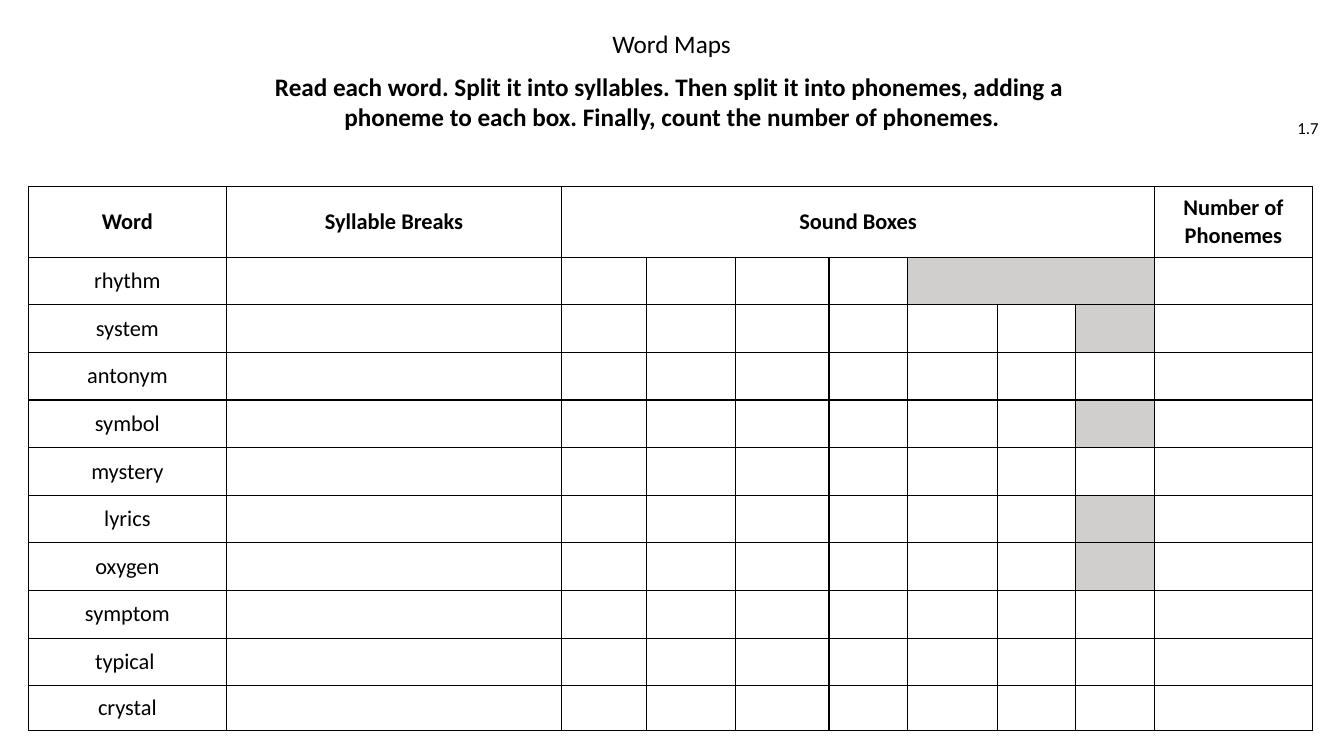
from pptx import Presentation
from pptx.dml.color import RGBColor
from pptx.enum import text as t
from pptx.oxml import parse_xml
from pptx.oxml.ns import nsdecls
from pptx.util import Cm, Pt

BLACK = RGBColor(0x00, 0x00, 0x00)
GREY = RGBColor(0xD1, 0xCE, 0xCE)
FONT = "Calibri"

TITLE = "Word Maps"
INSTRUCTIONS = (
    "Read each word. Split it into syllables. Then split it into phonemes, adding a \n"
    "phoneme to each box. Finally, count the number of phonemes."
)
LESSON = "1.7"

# Column number of each heading
HEADINGS = {0: "Word", 1: "Syllable Breaks", 2: "Sound Boxes", 9: "Number of Phonemes"}
# Each word with its number of open sound boxes
WORDS = [
    ("rhythm", 4), ("system", 6), ("antonym", 7), ("symbol", 6), ("mystery", 7),
    ("lyrics", 6), ("oxygen", 6), ("symptom", 7), ("typical ", 7), ("crystal", 7),
]
FIRST_BOX, LAST_BOX = 2, 8
COLUMN_WIDTHS = [4.98, 8.46, 2.13, 2.24, 2.36, 1.98, 2.26, 1.98, 1.98, 3.99]
ROW_HEIGHTS = [1.78] + [1.2] * 9 + [1.12]


def write(frame, content, size, align, bold=False):
    frame.text = content
    for paragraph in frame.paragraphs:
        paragraph.alignment = align
        for run in paragraph.runs:
            run.font.name, run.font.size, run.font.bold = FONT, Pt(size), bold
            run.font.color.rgb = BLACK


def add_label(slide, box, content, size, align, anchor, bold=False):
    frame = slide.shapes.add_textbox(*(Cm(length) for length in box)).text_frame
    frame.word_wrap = True
    frame.vertical_anchor = anchor
    write(frame, content, size, align, bold)


def outline(cell):
    """Draw a thin black line on all four sides of a cell."""
    properties = cell._tc.get_or_add_tcPr()
    for position, side in enumerate(("lnL", "lnR", "lnT", "lnB")):
        properties.insert(position, parse_xml(
            f'<a:{side} {nsdecls("a")} w="{Pt(1)}"><a:solidFill>'
            f'<a:srgbClr val="{BLACK}"/></a:solidFill></a:{side}>'))


def fill_cell(cell, content, bold=False):
    cell.vertical_anchor = t.MSO_ANCHOR.MIDDLE
    write(cell.text_frame, content, 16, t.PP_ALIGN.CENTER, bold)


def add_word_map(slide):
    table = slide.shapes.add_table(
        len(ROW_HEIGHTS), len(COLUMN_WIDTHS), Cm(0.72), Cm(4.7),
        Cm(sum(COLUMN_WIDTHS)), Cm(sum(ROW_HEIGHTS))).table
    table.first_row = table.horz_banding = False
    for column, width in zip(table.columns, COLUMN_WIDTHS):
        column.width = Cm(width)
    for row, height in zip(table.rows, ROW_HEIGHTS):
        row.height = Cm(height)
    for cell in table.iter_cells():
        cell.fill.background()
        outline(cell)

    table.cell(0, FIRST_BOX).merge(table.cell(0, LAST_BOX))
    for column, heading in HEADINGS.items():
        fill_cell(table.cell(0, column), heading, bold=True)

    for row, (word, boxes) in enumerate(WORDS, start=1):
        fill_cell(table.cell(row, 0), word)
        first_unused = FIRST_BOX + boxes
        if first_unused > LAST_BOX:
            continue
        unused = table.cell(row, first_unused)
        if first_unused < LAST_BOX:
            unused.merge(table.cell(row, LAST_BOX))
        unused.fill.solid()
        unused.fill.fore_color.rgb = GREY


def main():
    deck = Presentation()
    deck.slide_width, deck.slide_height = Cm(33.87), Cm(19.05)
    slide = deck.slides.add_slide(deck.slide_layouts[6])
    center, right = t.PP_ALIGN.CENTER, t.PP_ALIGN.RIGHT
    top, middle = t.MSO_ANCHOR.TOP, t.MSO_ANCHOR.MIDDLE
    add_label(slide, (31.88, 2.72, 1.6, 1.02), LESSON, 12, right, middle)
    add_label(slide, (5, 1.52, 23.88, 2.08), INSTRUCTIONS, 18, center, middle, bold=True)
    add_label(slide, (9.7, 0.58, 14.45, 0.89), TITLE, 18, center, top)
    add_word_map(slide)
    deck.save("out.pptx")


if __name__ == "__main__":
    main()
